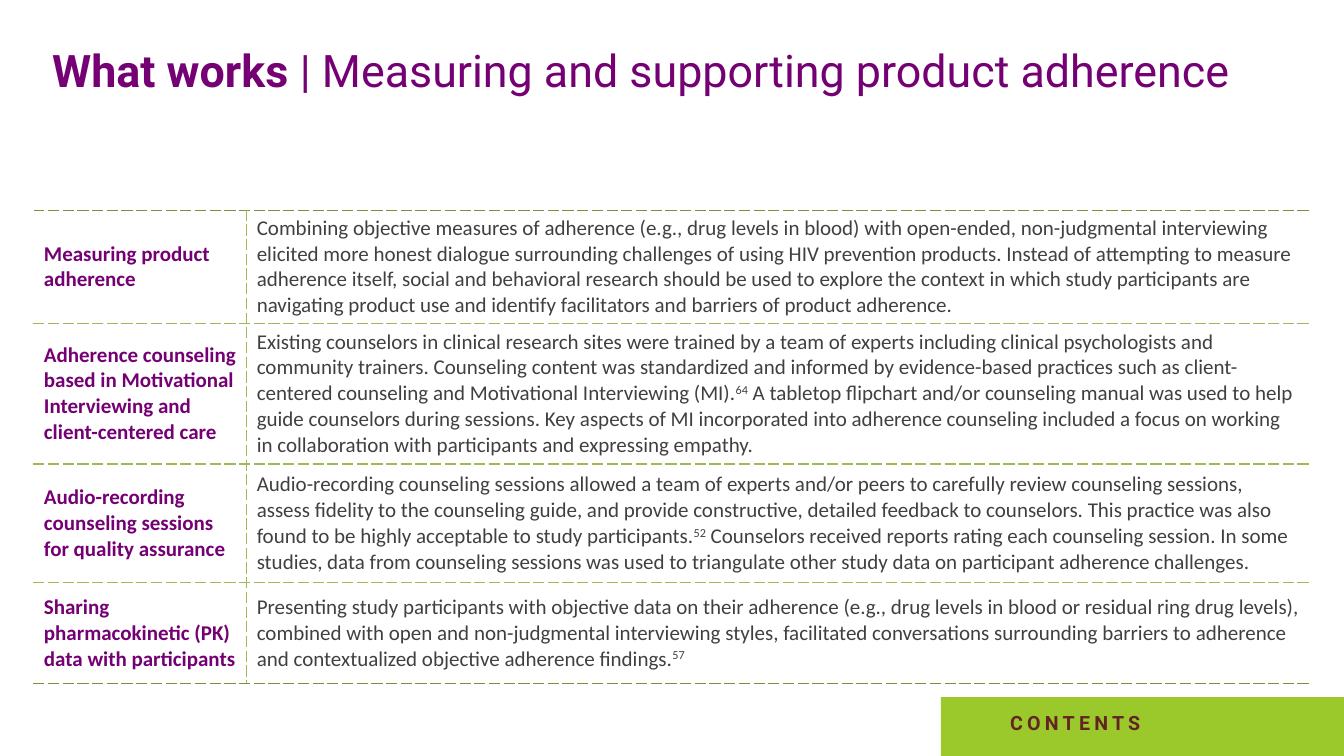
from dataclasses import dataclass

from lxml.etree import SubElement
from pptx import Presentation
from pptx.dml.color import RGBColor
from pptx.enum.shapes import MSO_SHAPE as Preset
from pptx.enum.text import MSO_ANCHOR as Anchor
from pptx.oxml.ns import qn
from pptx.util import Pt

PURPLE, GRAY, MAROON = "740074", "404040", "632523"
GREEN, DARK_GREEN, LIME = "9BBB59", "77933C", "9BC82A"


@dataclass
class Span:
    text: str
    size: float
    name: str
    color: str
    bold: bool = False
    raised: bool = False
    spacing: float = 0


@dataclass
class Practice:
    label: str
    height: float
    body: str
    citation: str = ""
    rest: str = ""


PRACTICES = [
    Practice(
        "Measuring product adherence", 80.6,
        "Combining objective measures of adherence (e.g., drug levels in blood) with open-ended, "
        "non-judgmental interviewing elicited more honest dialogue surrounding challenges of using HIV "
        "prevention products. Instead of attempting to measure adherence itself, social and behavioral "
        "research should be used to explore the context in which study participants are navigating "
        "product use and identify facilitators and barriers of product adherence."),
    Practice(
        "Adherence counseling based in Motivational Interviewing and client-centered care", 100.6,
        "Existing counselors in clinical research sites were trained by a team of experts including "
        "clinical psychologists and community trainers. Counseling content was standardized and informed "
        "by evidence-based practices such as client-centered counseling and Motivational Interviewing (MI).",
        "64",
        " A tabletop flipchart and/or counseling manual was used to help guide counselors during sessions. "
        "Key aspects of MI incorporated into adherence counseling included a focus on working in "
        "collaboration with participants and expressing empathy."),
    Practice(
        "Audio-recording counseling sessions for quality assurance", 85,
        "Audio-recording counseling sessions allowed a team of experts and/or peers to carefully review "
        "counseling sessions, assess fidelity to the counseling guide, and provide constructive, detailed "
        "feedback to counselors. This practice was also found to be highly acceptable to study participants.",
        "52",
        " Counselors received reports rating each counseling session. In some studies, data from counseling "
        "sessions was used to triangulate other study data on participant adherence challenges."),
    Practice(
        "Sharing pharmacokinetic (PK) data with participants", 72,
        "Presenting study participants with objective data on their adherence (e.g., drug levels in blood "
        "or residual ring drug levels), combined with open and non-judgmental interviewing styles, "
        "facilitated conversations surrounding barriers to adherence and contextualized objective "
        "adherence findings.",
        "57"),
]


def rgb(color: str) -> RGBColor:
    return RGBColor.from_string(color)


def write(para, spans: list[Span]) -> None:
    for span in spans:
        run = para.add_run()
        run.text = span.text
        formats = {"size": Pt(span.size), "name": span.name, "bold": span.bold}
        for key, value in formats.items():
            setattr(run.font, key, value)
        run.font.color.rgb = rgb(span.color)
        properties = run.font._element
        if span.raised:
            properties.set("baseline", "30000")
        if span.spacing:
            properties.set("spc", str(int(span.spacing * 100)))


def add_text(page, left: float, top: float, width: float, height: float,
             anchor: Anchor, spans: list[Span]) -> None:
    box = page.shapes.add_textbox(Pt(left), Pt(top), Pt(width), Pt(height))
    box.text_frame.word_wrap = True
    box.text_frame.vertical_anchor = anchor
    write(box.text_frame.paragraphs[0], spans)


def add_border(cell, side: str, color: str) -> None:
    line = SubElement(cell._tc.get_or_add_tcPr(), qn(f"a:ln{side}"), w=str(Pt(1)))
    fill = SubElement(line, qn("a:solidFill"))
    SubElement(fill, qn("a:srgbClr"), val=color)
    SubElement(line, qn("a:prstDash"), val="sysDash")


def fill_cell(cell, spans: list[Span], borders: dict[str, str]) -> None:
    for side, color in borders.items():
        add_border(cell, side, color)
    cell.fill.background()
    cell.vertical_anchor = Anchor.MIDDLE
    write(cell.text_frame.paragraphs[0], spans)


def add_practices(page) -> None:
    widths = (152, 760)
    total = sum(practice.height for practice in PRACTICES)
    table = page.shapes.add_table(len(PRACTICES), len(widths), Pt(24.2), Pt(150.2),
                                  Pt(sum(widths)), Pt(total)).table
    table.first_row = table.horz_banding = False
    for column, width in zip(table.columns, widths):
        column.width = Pt(width)
    last = len(PRACTICES) - 1
    for index, practice in enumerate(PRACTICES):
        table.rows[index].height = Pt(practice.height)
        edges = {"T": DARK_GREEN if index == 0 else GREEN,
                 "B": DARK_GREEN if index == last else GREEN}
        label = [Span(practice.label, 15, "Calibri", PURPLE, bold=True)]
        parts = ((practice.body, False), (practice.citation, True), (practice.rest, False))
        body = [Span(text, 15, "Calibri", GRAY, raised=raised) for text, raised in parts if text]
        fill_cell(table.cell(index, 0), label, {"R": GREEN, **edges})
        fill_cell(table.cell(index, 1), body, {"L": GREEN, **edges})


def add_contents_tab(page) -> None:
    tab = page.shapes.add_shape(Preset.RECTANGLE, Pt(672), Pt(498), Pt(288), Pt(241))
    tab.shadow.inherit = False
    tab.fill.solid()
    tab.fill.fore_color.rgb = rgb(LIME)
    tab.line.fill.background()
    add_text(page, 714.4, 504.5, 198, 24.5, Anchor.TOP,
             [Span("CONTENTS", 14, "Roboto", MAROON, bold=True, spacing=3)])


def main() -> None:
    deck = Presentation()
    deck.slide_width, deck.slide_height = Pt(960), Pt(540)
    page = deck.slides.add_slide(deck.slide_layouts[6])

    # Title
    add_text(page, 30.2, 12, 948, 76, Anchor.MIDDLE, [
        Span("What works ", 32, "Roboto", PURPLE, bold=True),
        Span("| Measuring and supporting product adherence", 32, "Roboto", PURPLE)])

    # Table of practices and the tab at the foot
    add_practices(page)
    add_contents_tab(page)

    deck.save("out.pptx")


if __name__ == "__main__":
    main()
